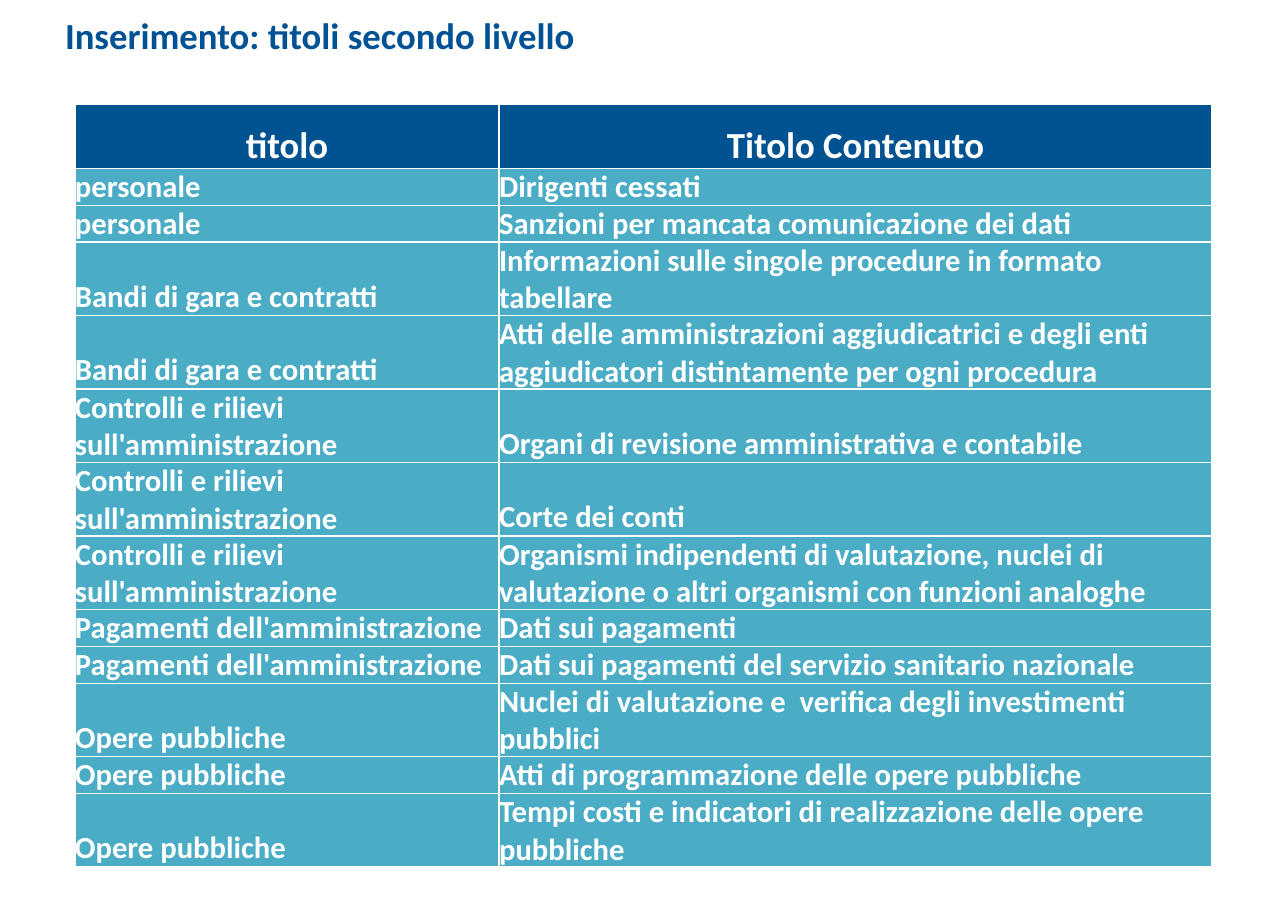
import pptx
import pptx.util
import pptx.dml.color
import pptx.enum.text
import pptx.oxml
import pptx.oxml.ns
import lxml.etree

Inches = pptx.util.Inches
RGBColor = pptx.dml.color.RGBColor
ALIGN = pptx.enum.text.PP_ALIGN
ANCHOR = pptx.enum.text.MSO_ANCHOR

TITLE = "Inserimento: titoli secondo livello"
HEADER = ("titolo", "Titolo Contenuto")
ROWS = [
    ("personale", "Dirigenti cessati", 1),
    ("personale", "Sanzioni per mancata comunicazione dei dati", 1),
    ("Bandi di gara e contratti", "Informazioni sulle singole procedure in formato tabellare", 2),
    ("Bandi di gara e contratti",
     "Atti delle amministrazioni aggiudicatrici e degli enti aggiudicatori distintamente per ogni procedura", 2),
    ("Controlli e rilievi sull'amministrazione", "Organi di revisione amministrativa e contabile", 2),
    ("Controlli e rilievi sull'amministrazione", "Corte dei conti", 2),
    ("Controlli e rilievi sull'amministrazione",
     "Organismi indipendenti di valutazione, nuclei di valutazione o altri organismi con funzioni analoghe", 2),
    ("Pagamenti dell'amministrazione", "Dati sui pagamenti", 1),
    ("Pagamenti dell'amministrazione", "Dati sui pagamenti del servizio sanitario nazionale", 1),
    ("Opere pubbliche", "Nuclei di valutazione e  verifica degli investimenti pubblici", 2),
    ("Opere pubbliche", "Atti di programmazione delle opere pubbliche", 1),
    ("Opere pubbliche", "Tempi costi e indicatori di realizzazione delle opere pubbliche", 2),
]

FONT = "Calibri"
TITLE_BLUE = RGBColor(0x00, 0x52, 0x94)
HEADER_BLUE = RGBColor(0x00, 0x52, 0x91)
BODY_TEAL = RGBColor(0x4B, 0xAC, 0xC6)
WHITE = RGBColor(0xFF, 0xFF, 0xFF)

SLIDE_WIDTH, SLIDE_HEIGHT = Inches(11.69), Inches(8.27)
TABLE_LEFT, TABLE_TOP = Inches(0.68), Inches(0.95)
COLUMN_WIDTHS = (Inches(3.85), Inches(6.47))
HEADER_HEIGHT, LINE_HEIGHT = Inches(0.58), Inches(0.33)


def write_text(text_frame, text, size=20, color=WHITE, align=ALIGN.LEFT):
    text_frame.word_wrap = True
    paragraph = text_frame.paragraphs[0]
    paragraph.alignment = align
    run = paragraph.add_run()
    run.text = text
    run.font.name = FONT
    run.font.size = pptx.util.Pt(size)
    run.font.bold = True
    run.font.color.rgb = color


def set_margins(target, left=0, top=0, right=0, bottom=0):
    target.margin_left, target.margin_top = Inches(left), Inches(top)
    target.margin_right, target.margin_bottom = Inches(right), Inches(bottom)


def add_borders(cell, color=WHITE, width=1):
    properties = cell._tc.get_or_add_tcPr()
    for position, side in enumerate(("lnL", "lnR", "lnT", "lnB")):
        line = lxml.etree.Element(pptx.oxml.ns.qn(f"a:{side}"), w=str(pptx.util.Pt(width)))
        fill = lxml.etree.SubElement(line, pptx.oxml.ns.qn("a:solidFill"))
        lxml.etree.SubElement(fill, pptx.oxml.ns.qn("a:srgbClr"), val=str(color))
        properties.insert(position, line)


def add_title(slide):
    box = slide.shapes.add_textbox(0, 0, SLIDE_WIDTH, Inches(0.68))
    set_margins(box.text_frame, 0.59, 0.12, 0.24, 0.15)
    write_text(box.text_frame, TITLE, size=24, color=TITLE_BLUE)


def add_contents_table(slide):
    heights = [HEADER_HEIGHT] + [lines * LINE_HEIGHT for *_, lines in ROWS]
    texts = [HEADER] + [row[:2] for row in ROWS]
    table = slide.shapes.add_table(
        len(texts), len(HEADER), TABLE_LEFT, TABLE_TOP, sum(COLUMN_WIDTHS), sum(heights)).table
    for column, width in zip(table.columns, COLUMN_WIDTHS):
        column.width = width
    for row_index, (row, height) in enumerate(zip(table.rows, heights)):
        row.height = height
        is_header = row_index == 0
        for cell, text in zip(row.cells, texts[row_index]):
            set_margins(cell)
            cell.vertical_anchor = ANCHOR.BOTTOM
            cell.fill.solid()
            cell.fill.fore_color.rgb = HEADER_BLUE if is_header else BODY_TEAL
            add_borders(cell)
            write_text(cell.text_frame, text, size=24 if is_header else 20,
                       align=ALIGN.CENTER if is_header else ALIGN.LEFT)


def main():
    presentation = pptx.Presentation()
    presentation.slide_width, presentation.slide_height = SLIDE_WIDTH, SLIDE_HEIGHT
    slide = presentation.slides.add_slide(presentation.slide_layouts[6])
    add_title(slide)
    add_contents_table(slide)
    presentation.save("out.pptx")


if __name__ == "__main__":
    main()
